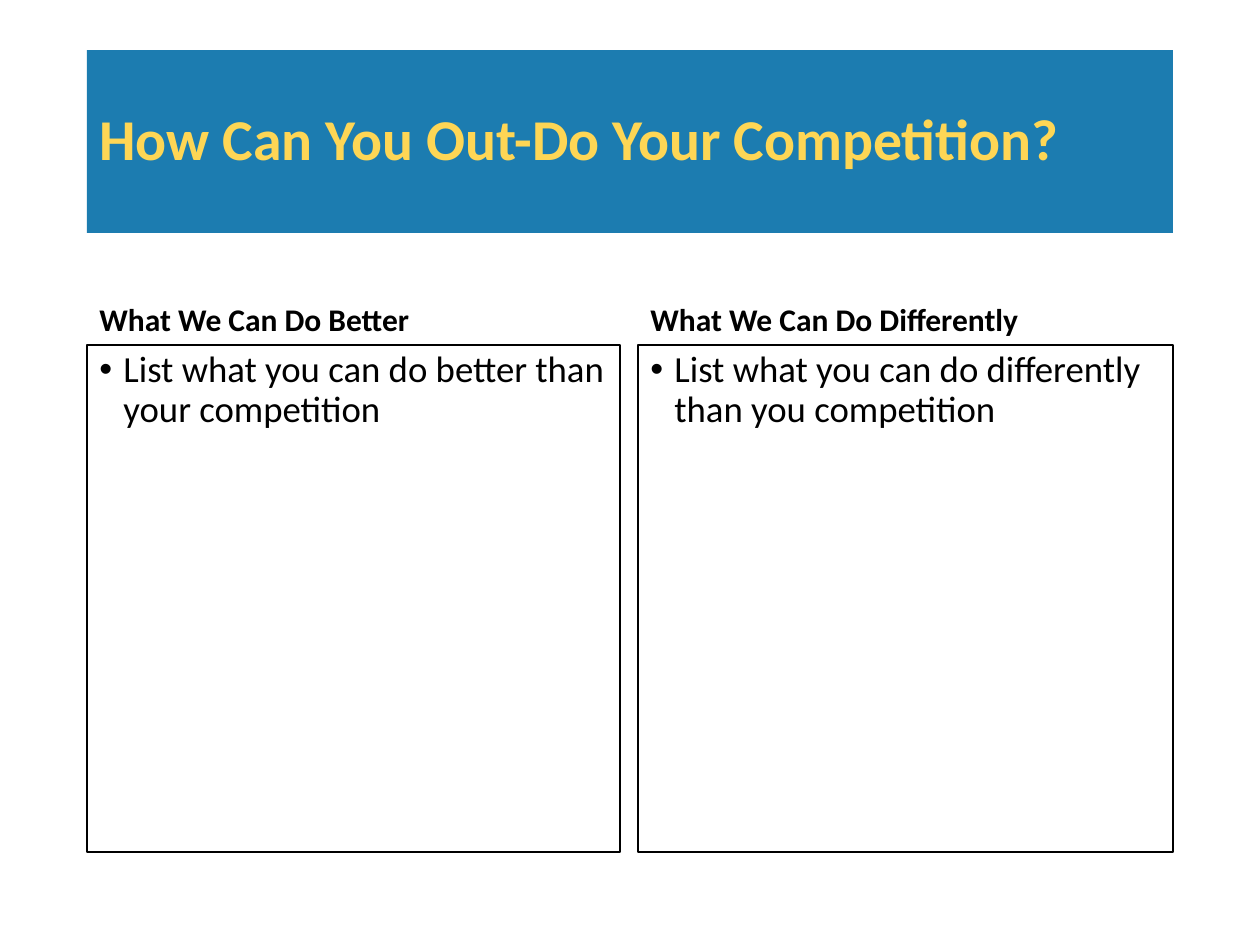
from lxml import etree
from pptx import Presentation
from pptx.dml.color import RGBColor
from pptx.enum.shapes import MSO_SHAPE
from pptx.enum.text import MSO_ANCHOR, PP_ALIGN
from pptx.oxml.ns import qn
from pptx.util import Pt

RECT = MSO_SHAPE.RECTANGLE
TOP, MIDDLE, BOTTOM = MSO_ANCHOR.TOP, MSO_ANCHOR.MIDDLE, MSO_ANCHOR.BOTTOM
LEFT = PP_ALIGN.LEFT
BLUE = RGBColor(0x1C, 0x7C, 0xB0)
GOLD = RGBColor(0xFE, 0xD6, 0x55)
BLACK = RGBColor(0, 0, 0)
FONT = "Calibri"
SCALE = 914400 / 126
EDGE = 87
HEAD_Y, LIST_Y = 232, 345
INDENT = 24
COLUMNS = [
    (EDGE, 533, "What We Can Do Better",
     "List what you can do better than your competition"),
    (638, 535, "What We Can Do Differently",
     "List what you can do differently than you competition"),
]


def px(n):
    return round(n * SCALE)


def write(shape, text, size=18, color=BLACK, bold=False, anchor=TOP,
          before=0, bullet=False):
    frame = shape.text_frame
    frame.word_wrap = True
    frame.vertical_anchor = anchor
    para = frame.paragraphs[0]
    para.alignment = LEFT
    para.line_spacing = 0.9
    para.space_before = Pt(before)
    run = para.add_run()
    run.text = text
    font = run.font
    font.name, font.size, font.bold = FONT, Pt(size), bold
    font.color.rgb = color
    if bullet:
        props = para._p.get_or_add_pPr()
        props.set("marL", str(px(INDENT)))
        props.set("indent", str(px(-INDENT)))
        etree.SubElement(props, qn("a:buFont")).set("typeface", "Arial")
        etree.SubElement(props, qn("a:buChar")).set("char", "•")


def add_box(slide, x, y, w, h, fill=None, line=None):
    box = slide.shapes.add_shape(RECT, px(x), px(y), px(w), px(h))
    box.shadow.inherit = False
    if fill is None:
        box.fill.background()
    else:
        box.fill.solid()
        box.fill.fore_color.rgb = fill
    if line is None:
        box.line.fill.background()
    else:
        box.line.color.rgb = line
        box.line.width = Pt(0.75)
    return box


def add_column(slide, x, w, head, item):
    label = slide.shapes.add_textbox(px(x), px(HEAD_Y), px(w),
                                     px(LIST_Y - HEAD_Y))
    write(label, head, bold=True, anchor=BOTTOM, before=7.5)
    box = add_box(slide, x, LIST_Y, w, 507, line=BLACK)
    write(box, item, size=21, before=7.5, bullet=True)


def main():
    deck = Presentation()
    deck.slide_width, deck.slide_height = px(1260), px(945)
    slide = deck.slides.add_slide(deck.slide_layouts[6])
    title = add_box(slide, EDGE, 50, 1086, 183, fill=BLUE)
    write(title, "How Can You Out-Do Your Competition?", size=33,
          color=GOLD, bold=True, anchor=MIDDLE)
    for column in COLUMNS:
        add_column(slide, *column)
    deck.save("out.pptx")


if __name__ == "__main__":
    main()
